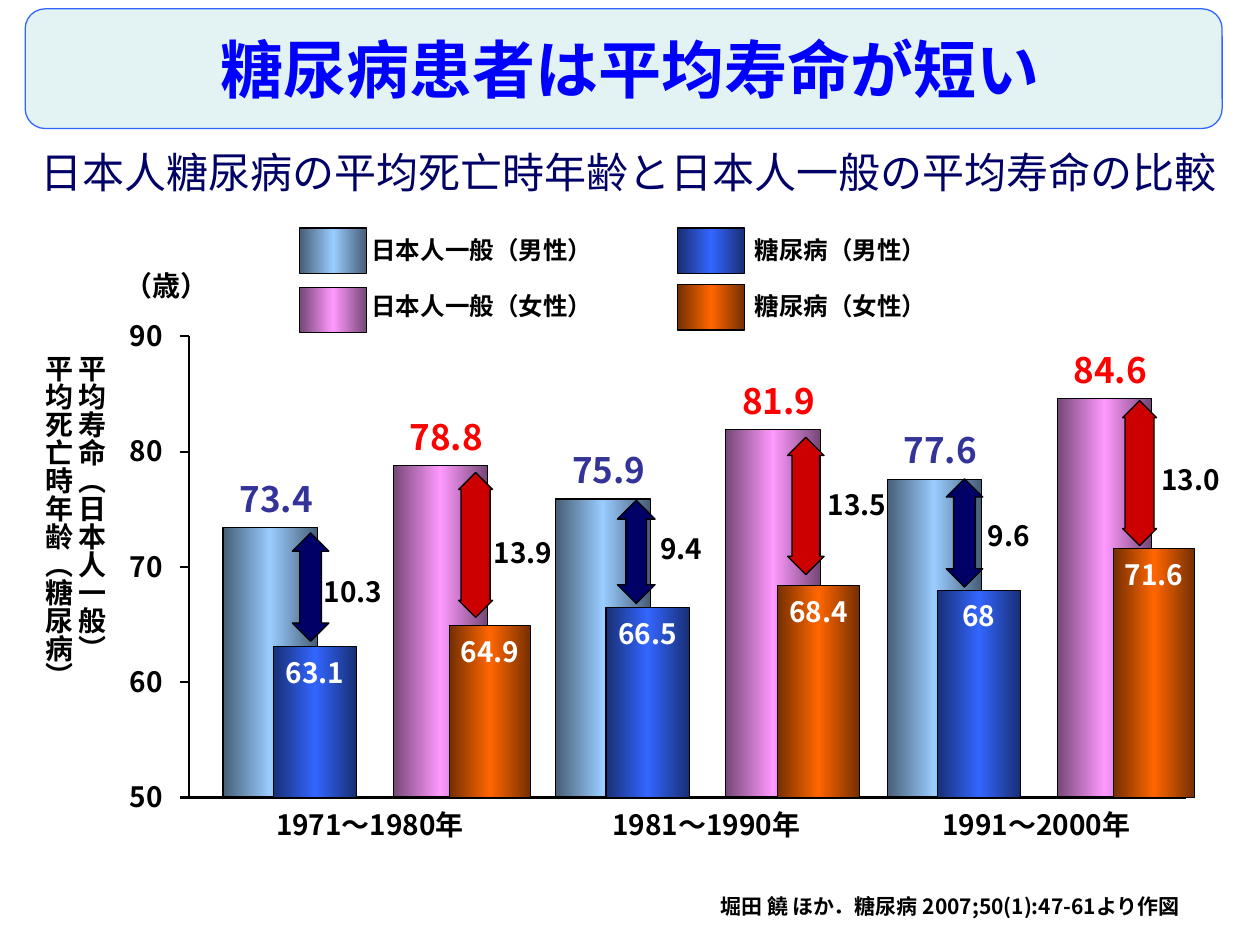
from copy import deepcopy

from lxml.etree import SubElement
from pptx import Presentation
from pptx.dml.color import RGBColor
from pptx.enum.shapes import MSO_CONNECTOR, MSO_SHAPE
from pptx.enum.text import MSO_ANCHOR, PP_ALIGN
from pptx.oxml.ns import qn
from pptx.util import Inches, Pt

FONT = "Noto Sans CJK JP"
BLACK = RGBColor(0x00, 0x00, 0x00)
WHITE = RGBColor(0xFF, 0xFF, 0xFF)
NAVY = RGBColor(0x00, 0x00, 0x66)
INDIGO = RGBColor(0x33, 0x33, 0x99)
RED = RGBColor(0xFF, 0x00, 0x00)
DARK_RED = RGBColor(0xCC, 0x00, 0x00)
BLUE = RGBColor(0x00, 0x00, 0xFF)
BANNER_LINE = RGBColor(0x33, 0x66, 0xFF)
BANNER_FILL = RGBColor(0xBB, 0xE0, 0xE3)

# Edge and middle colour of each series' gradient
GENERAL_MALE = (RGBColor(0x47, 0x5E, 0x76), RGBColor(0x99, 0xCC, 0xFF))
GENERAL_FEMALE = (RGBColor(0x76, 0x47, 0x76), RGBColor(0xFF, 0x99, 0xFF))
DIABETIC_MALE = (RGBColor(0x18, 0x2F, 0x76), RGBColor(0x33, 0x66, 0xFF))
DIABETIC_FEMALE = (RGBColor(0x76, 0x2F, 0x00), RGBColor(0xFF, 0x66, 0x00))

HEADLINE = "糖尿病患者は平均寿命が短い"
SUBTITLE = "日本人糖尿病の平均死亡時年齢と日本人一般の平均寿命の比較"
CITATION = "堀田 饒 ほか．糖尿病 2007;50(1):47-61より作図"
AXIS_TITLE = ["平均寿命（日本人一般）", "平均死亡時年齢（糖尿病）"]
UNIT = "（歳）"

# general value, diabetic value, difference, general bar left,
# diabetic bar left and width, arrow box, difference label left and top
MALE = [
    ("73.4", "63.1", "10.3", 1.77, (2.17, 0.66), (2.32, 4.23, 0.29, 0.86), (2.47, 4.51)),
    ("75.9", "66.5", "9.4", 4.41, (4.81, 0.66), (4.9, 3.97, 0.3, 0.82), (5.14, 4.17)),
    ("77.6", "68", "9.6", 7.04, (7.44, 0.66), (7.51, 3.8, 0.29, 0.86), (7.74, 4.07)),
]
FEMALE = [
    ("78.8", "64.9", "13.9", 3.12, (3.57, 0.64), (3.64, 3.75, 0.27, 1.15), (3.82, 4.2)),
    ("81.9", "68.4", "13.5", 5.76, (6.17, 0.65), (6.25, 3.47, 0.29, 1.09), (6.47, 3.82)),
    ("84.6", "71.6", "13.0", 8.39, (8.84, 0.64), (8.91, 3.18, 0.27, 1.15), (9.12, 3.62)),
]
# rows, general colours, diabetic colours, value colour, arrow colour
GROUPS = [
    (MALE, GENERAL_MALE, DIABETIC_MALE, INDIGO, NAVY),
    (FEMALE, GENERAL_FEMALE, DIABETIC_FEMALE, RED, DARK_RED),
]
PERIODS = [("1971～1980年", 1.84), ("1981～1990年", 4.51), ("1991～2000年", 7.13)]
# label, its box, swatch colours, swatch left and top
LEGEND = [
    ("日本人一般（男性）", (2.85, 1.82, 2.1, 0.33), GENERAL_MALE, 2.38, 1.81),
    ("日本人一般（女性）", (2.85, 2.26, 2.1, 0.33), GENERAL_FEMALE, 2.38, 2.28),
    ("糖尿病（男性）", (5.89, 1.82, 1.7, 0.33), DIABETIC_MALE, 5.38, 1.81),
    ("糖尿病（女性）", (5.89, 2.26, 1.7, 0.33), DIABETIC_FEMALE, 5.38, 2.26),
]
TICKS = range(50, 91, 10)

AXIS_LEFT, AXIS_RIGHT = 1.5, 9.41
AXIS_TOP, AXIS_BOTTOM = 2.67, 6.33
GENERAL_WIDTH = 0.75


def y_of(age):
    return AXIS_BOTTOM - (float(age) - 50) / 40 * (AXIS_BOTTOM - AXIS_TOP)


def write(frame, text, size=16, color=BLACK, bold=True, align=PP_ALIGN.LEFT,
          anchor=MSO_ANCHOR.TOP, wrap=False, inset=True, vertical=False):
    """Fill a text frame; a list of strings gives one paragraph each."""
    frame.word_wrap = wrap
    frame.vertical_anchor = anchor
    if not inset:
        frame.margin_left = frame.margin_right = 0
        frame.margin_top = frame.margin_bottom = 0
    if vertical:
        frame._txBody.bodyPr.set("vert", "eaVert")
    lines = [text] if isinstance(text, str) else text
    for number, line in enumerate(lines):
        paragraph = frame.add_paragraph() if number else frame.paragraphs[0]
        paragraph.alignment = align
        run = paragraph.add_run()
        run.text = line
        run.font.size = Pt(size)
        run.font.bold = bold
        run.font.color.rgb = color
        run.font.name = FONT
        SubElement(run.font._element, qn("a:ea")).set("typeface", FONT)


def add_label(slide, box, text, **style):
    label = slide.shapes.add_textbox(*map(Inches, box))
    write(label.text_frame, text, **style)


def add_outlined(slide, kind, box, line_color=BLACK, line_width=0.75):
    shape = slide.shapes.add_shape(kind, *map(Inches, box))
    shape.shadow.inherit = False
    shape.line.color.rgb = line_color
    shape.line.width = Pt(line_width)
    return shape


def add_bar(slide, box, colors):
    """Rectangle shaded from edge to middle to edge."""
    bar = add_outlined(slide, MSO_SHAPE.RECTANGLE, box, line_width=0.63)
    bar.fill.gradient()
    bar.fill.gradient_angle = 0
    stop_list = bar._element.spPr.find(".//" + qn("a:gsLst"))
    stop_list.append(deepcopy(stop_list[0]))
    edge, middle = colors
    for stop, position, color in zip(bar.fill.gradient_stops, (0, 0.5, 1), (edge, middle, edge)):
        stop.position = position
        stop.color.rgb = color


def add_axis_line(slide, *ends):
    line = slide.shapes.add_connector(MSO_CONNECTOR.STRAIGHT, *map(Inches, ends))
    line.line.color.rgb = BLACK
    line.line.width = Pt(1.25)
    SubElement(line._element.spPr, qn("a:effectLst"))


def add_axes(slide):
    add_axis_line(slide, AXIS_LEFT, AXIS_TOP, AXIS_LEFT, AXIS_BOTTOM)
    add_axis_line(slide, AXIS_LEFT, AXIS_BOTTOM, AXIS_RIGHT, AXIS_BOTTOM)
    for age in TICKS:
        y = y_of(age)
        add_axis_line(slide, AXIS_LEFT - 0.07, y, AXIS_LEFT, y)
        add_label(slide, (1.03, y - 0.14, 0.3, 0.3), str(age), inset=False)
    add_label(slide, (0.11, 2.72, 0.8, 3.12), AXIS_TITLE, vertical=True)
    add_label(slide, (0.89, 2.08, 0.96, 0.4), UNIT)
    for period, left in PERIODS:
        add_label(slide, (left, 6.36, 2.19, 0.4), period, align=PP_ALIGN.CENTER)


def add_general_bars(slide):
    for rows, colors, _, value_color, _ in GROUPS:
        for value, _, _, left, _, _, _ in rows:
            top = y_of(value)
            add_bar(slide, (left, top, GENERAL_WIDTH, AXIS_BOTTOM - top), colors)
            add_label(slide, (left + 0.13, top - 0.4, 0.66, 0.33), value,
                      size=20, color=value_color, inset=False)


def add_diabetic_bars(slide):
    for rows, _, colors, _, _ in GROUPS:
        for _, value, _, _, (left, width), _, _ in rows:
            top = y_of(value)
            add_bar(slide, (left, top, width, AXIS_BOTTOM - top), colors)
            add_label(slide, (left, top + 0.07, width, 0.3), value,
                      color=WHITE, align=PP_ALIGN.CENTER, inset=False)


def add_differences(slide):
    for rows, _, _, _, arrow_color in GROUPS:
        for _, _, difference, _, _, box, (left, top) in rows:
            arrow = add_outlined(slide, MSO_SHAPE.UP_DOWN_ARROW, box)
            arrow.fill.solid()
            arrow.fill.fore_color.rgb = arrow_color
            arrow.adjustments[1] = box[3] / box[2] / 5
            width = 0.74 if len(difference) == 4 else 0.62
            add_label(slide, (left, top, width, 0.37), difference)


def add_banner(slide):
    banner = add_outlined(slide, MSO_SHAPE.ROUNDED_RECTANGLE, (0.2, 0.07, 9.5, 0.95), BANNER_LINE)
    banner.fill.solid()
    banner.fill.fore_color.rgb = BANNER_FILL
    tint = banner._element.spPr.find(qn("a:solidFill"))[0]
    SubElement(tint, qn("a:alpha")).set("val", "40000")
    add_label(slide, (0.5, 0.19, 9, 0.7), HEADLINE, size=36, color=BLUE, wrap=True,
              align=PP_ALIGN.CENTER, anchor=MSO_ANCHOR.MIDDLE)


def main():
    deck = Presentation()
    deck.slide_width, deck.slide_height = Inches(10), Inches(7.5)
    slide = deck.slides.add_slide(deck.slide_layouts[5])
    title = slide.shapes.title
    title.left, title.top, title.width, title.height = map(Inches, (0.12, 1.02, 9.73, 0.69))
    write(title.text_frame, SUBTITLE, size=24, color=NAVY, bold=False, wrap=True,
          align=PP_ALIGN.CENTER, anchor=MSO_ANCHOR.MIDDLE)
    add_label(slide, (5.62, 7.04, 4.16, 0.3), CITATION, size=12)
    add_general_bars(slide)
    add_axes(slide)
    add_diabetic_bars(slide)
    for text, box, colors, left, top in LEGEND:
        add_label(slide, box, text, size=14)
        add_bar(slide, (left, top, 0.53, 0.36), colors)
    add_differences(slide)
    add_banner(slide)
    deck.save("out.pptx")


if __name__ == "__main__":
    main()
